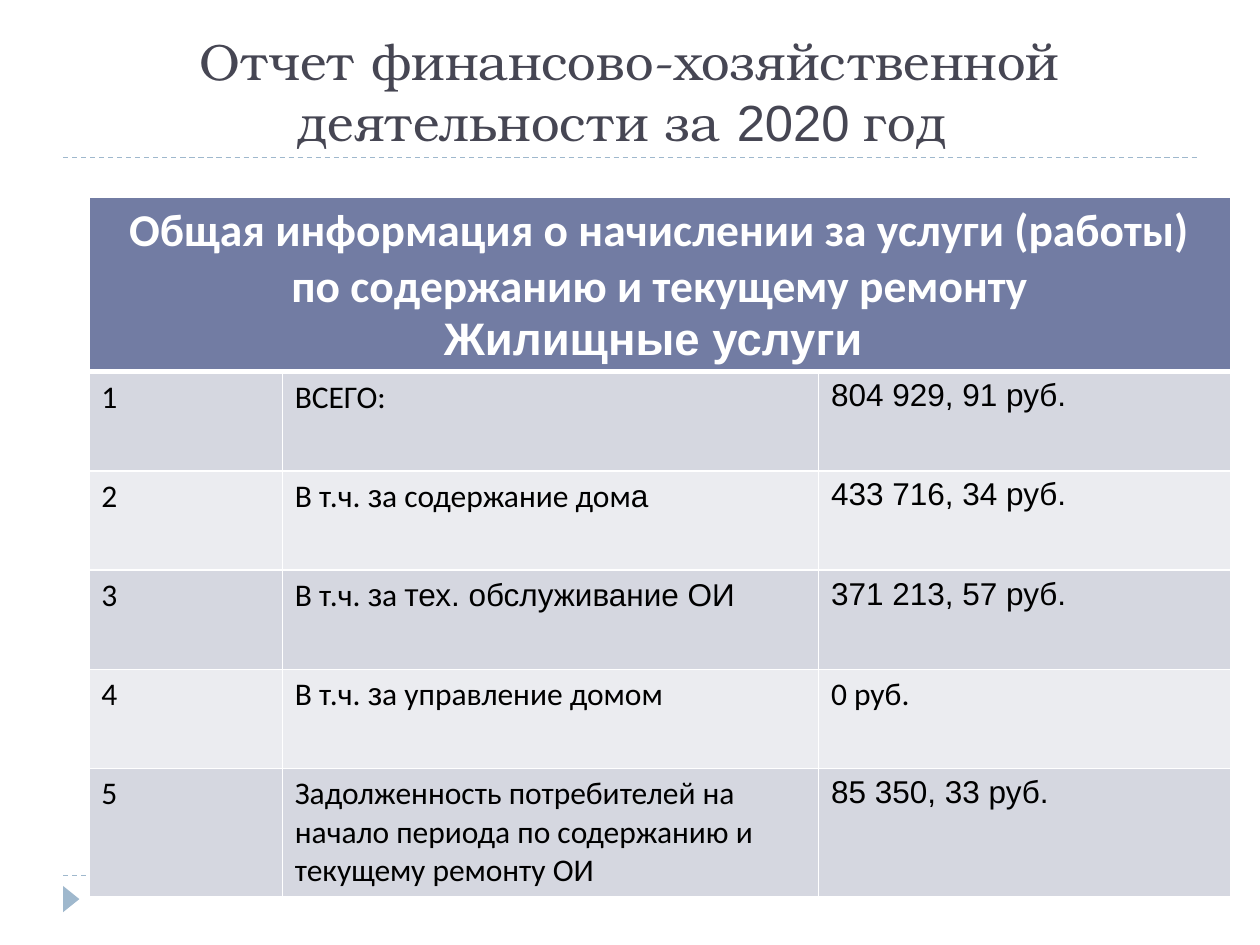
from lxml.etree import SubElement
from pptx import Presentation
from pptx.dml.color import RGBColor
from pptx.enum.dml import MSO_LINE
from pptx.enum.shapes import MSO_CONNECTOR, MSO_SHAPE
from pptx.enum.text import MSO_ANCHOR, MSO_AUTO_SIZE, PP_ALIGN
from pptx.oxml.ns import qn
from pptx.util import Cm, Pt

COLORS = {
    "accent": "9FB8CD", "title": "464653", "header": "727CA3",
    "odd": "D5D7E0", "even": "EBECF0", "white": "FFFFFF", "black": "000000",
}
C = {name: RGBColor.from_string(value) for name, value in COLORS.items()}
SERIF, SANS, BODY = "TeX Gyre Bonum", "Arial", "Calibri"


def write(p, runs, size, color, bold=False, align=PP_ALIGN.LEFT):
    """Fill a paragraph with (text, font name) runs in one size and colour."""
    p.alignment = align
    p.font.size, p.font.bold = Pt(size), bold
    p.font.color.rgb = C[color]
    for text, font in runs:
        r = p.add_run()
        r.text, r.font.name = text, font


def style_cell(cell, fill, top=1, bottom=1):
    """White borders (widths in points) and a solid fill."""
    tcPr = cell._tc.get_or_add_tcPr()
    for side, width in (("L", 1), ("R", 1), ("T", top), ("B", bottom)):
        ln = SubElement(tcPr, qn(f"a:ln{side}"), w=str(Pt(width)))
        SubElement(SubElement(ln, qn("a:solidFill")), qn("a:srgbClr"), val=COLORS["white"])
    cell.fill.solid()
    cell.fill.fore_color.rgb = C[fill]


prs = Presentation()
prs.slide_width, prs.slide_height = Cm(25.4), Cm(19.05)
s = prs.slides.add_slide(prs.slide_layouts[5])

# Dashed rules above the footer and under the title
for y in (17.65, 3.18):
    line = s.shapes.add_connector(MSO_CONNECTOR.STRAIGHT, Cm(1.27), Cm(y), Cm(24.13), Cm(y))
    line.line.color.rgb = C["accent"]
    line.line.width = Pt(0.75)
    line.line.dash_style = MSO_LINE.DASH
    SubElement(line._element.spPr, qn("a:effectLst"))

# Footer marker
sp = s.shapes.add_shape(MSO_SHAPE.ISOSCELES_TRIANGLE, Cm(1.17), Cm(17.96), Cm(0.53), Cm(0.33))
sp.rotation = 90
sp.shadow.inherit = False
sp.fill.solid()
sp.fill.fore_color.rgb = C["accent"]
sp.line.fill.background()

# Title
title = s.shapes.title
title.left, title.top, title.width, title.height = Cm(1.27), Cm(0.64), Cm(22.86), Cm(2.54)
tf = title.text_frame
tf.auto_size = MSO_AUTO_SIZE.NONE
tf.vertical_anchor = MSO_ANCHOR.BOTTOM
write(tf.paragraphs[0],
      [("Отчет финансово-хозяйственной деятельности за ", SERIF), ("2020 ", SANS), ("год ", SERIF)],
      29, "title", align=PP_ALIGN.CENTER)

# Table: each row is (item runs, amount runs), numbered from 1
rows = [
    ([("ВСЕГО:", BODY)], [("804 929, 91 руб.", SANS)]),
    ([("В т.ч. ", BODY), ("з", SANS), ("а содержание дом", BODY), ("а", SANS)],
     [("433 716, 34 руб.", SANS)]),
    ([("В т.ч. ", BODY), ("з", SANS), ("а ", BODY), ("тех. обслуживание ОИ", SANS)],
     [("371 213, 57 руб.", SANS)]),
    ([("В т.ч. ", BODY), ("з", SANS), ("а управление домом", BODY)], [("0 руб.", BODY)]),
    ([("Задолженность потребителей на начало периода по содержанию и текущему ремонту ОИ", BODY)],
     [("85 350, 33 руб.", SANS)]),
]
table = s.shapes.add_table(len(rows) + 1, 3, Cm(1.79), Cm(3.97), Cm(23.02), Cm(13)).table
for column, width in zip(table.columns, (3.9, 10.81, 8.31)):
    column.width = Cm(width)
for row in table.rows:
    row.height = Cm(2)
table.rows[0].height = Cm(2.95)

# Header across all columns
for cell in table.rows[0].cells:
    style_cell(cell, "header", bottom=3)
header = table.cell(0, 0)
header.merge(table.cell(0, 2))
tf = header.text_frame
heading = "Общая информация о начислении за услуги (работы) по содержанию и текущему ремонту"
write(tf.paragraphs[0], [(heading, BODY)], 26, "white", True, PP_ALIGN.CENTER)
write(tf.add_paragraph(), [("Жилищные услуги ", SANS)], 26, "white", True, PP_ALIGN.CENTER)

# Body rows
for i, (item, amount) in enumerate(rows, start=1):
    for cell, runs in zip(table.rows[i].cells, ([(str(i), BODY)], item, amount)):
        style_cell(cell, "odd" if i % 2 else "even", top=3 if i == 1 else 1)
        write(cell.text_frame.paragraphs[0], runs, 18, "black")

prs.save("out.pptx")
